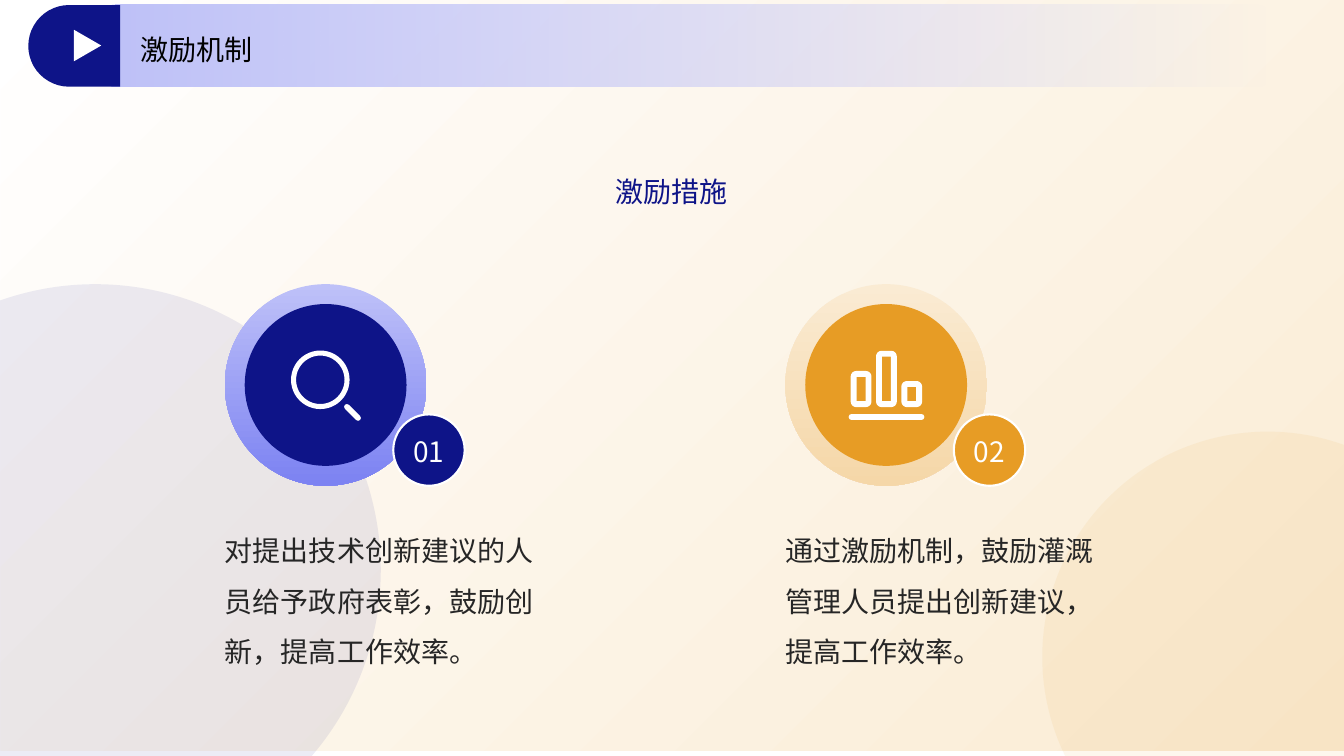
import pptx
import pptx.util
import pptx.dml.color
import pptx.enum.shapes
import pptx.enum.text
import pptx.oxml.ns
from lxml import etree

Pt = pptx.util.Pt
RGB = pptx.dml.color.RGBColor.from_string
SHAPE = pptx.enum.shapes.MSO_SHAPE
ALIGN = pptx.enum.text.PP_ALIGN
ANCHOR = pptx.enum.text.MSO_ANCHOR
qn = pptx.oxml.ns.qn
FONT = "Noto Sans CJK SC"
COLORS = {
    "navy": "0E1488", "lavender": "BEC1F8", "violet": "7C82F2",
    "orange": "E79C25", "cream": "FAEBD3", "sand": "F5D7A8",
    "white": "FFFFFF", "black": "000000", "text": "262626",
}

presentation = pptx.Presentation()
presentation.slide_width, presentation.slide_height = Pt(960), Pt(540)
slide = presentation.slides.add_slide(presentation.slide_layouts[6])


def add_shape(kind, box, colors=(), angle=0, alphas=(), line=None, width=1.5):
    """Add a shape with no fill, a solid fill or a two-stop gradient."""
    shape = slide.shapes.add_shape(kind, *[Pt(length) for length in box])
    shape.shadow.inherit = False
    if len(colors) == 2:
        shape.fill.gradient()
        shape.fill.gradient_angle = (360 - angle) % 360
        for stop, color, position in zip(shape.fill.gradient_stops, colors, (0, 1)):
            stop.color.rgb, stop.position = RGB(COLORS[color]), position
    elif colors:
        shape.fill.solid()
        shape.fill.fore_color.rgb = RGB(COLORS[colors[0]])
    else:
        shape.fill.background()
    fill_colors = list(shape._element.spPr.iter(qn("a:srgbClr")))
    for fill_color, alpha in zip(fill_colors, alphas):
        etree.SubElement(fill_color, qn("a:alpha"), val=str(alpha * 1000))
    if line:
        shape.line.color.rgb, shape.line.width = RGB(COLORS[line]), Pt(width)
    else:
        shape.line.fill.background()
    return shape


def write(shape, text, color, spacing, align=ALIGN.LEFT, anchor=ANCHOR.MIDDLE):
    """Write one 20 pt paragraph into a shape or text box."""
    frame = shape.text_frame
    frame_format = {"word_wrap": True, "vertical_anchor": anchor, "margin_left": 0,
                    "margin_right": 0, "margin_top": 0, "margin_bottom": 0}
    paragraph = frame.paragraphs[0]
    run = paragraph.add_run()
    run.text = text
    formats = (
        (frame, frame_format),
        (paragraph, {"alignment": align, "line_spacing": spacing}),
        (run.font, {"name": FONT, "size": Pt(20)}),
    )
    for target, values in formats:
        for name, value in values.items():
            setattr(target, name, value)
    run.font.color.rgb = RGB(COLORS[color])
    etree.SubElement(run.font._element, qn("a:ea"), typeface=FONT)


# Background wash and two pale discs
add_shape(SHAPE.RECTANGLE, (0.5, -4, 960, 540), ("white", "cream"), 45)
add_shape(SHAPE.OVAL, (-136, 203, 408, 408), ("navy",), alphas=(8,))
add_shape(SHAPE.OVAL, (744.5, 308.3, 322, 322), ("orange",), alphas=(8,))

# Header band with title and play mark
add_shape(SHAPE.ROUNDED_RECTANGLE, (72.7, 3.6, 835.2, 58.3),
          ("lavender", "lavender"), alphas=(100, 0))
tab = add_shape(SHAPE.ROUND_2_SAME_RECTANGLE, (23.8, 0, 58.3, 65.5), ("navy",))
tab.adjustments[0], tab.adjustments[1] = 0.5, 0
tab.rotation = 270
play_mark = add_shape(SHAPE.ISOSCELES_TRIANGLE, (51.3, 22.8, 22.5, 19.5), ("white",))
play_mark.rotation = 90
title = slide.shapes.add_textbox(Pt(100.6), Pt(14.4), Pt(613), Pt(39))
write(title, "激励机制", "black", 1.1)

# Section heading
heading = slide.shapes.add_textbox(Pt(52.6), Pt(105), Pt(854.6), Pt(56))
write(heading, "激励措施", "navy", 1.3, ALIGN.CENTER)

# Two measures: halo, disc, numbered badge and description
CARD_TOP, CARD_LEFTS = 203, (160.6, 561)
measures = (
    ("01", "navy", ("lavender", "violet"),
     "对提出技术创新建议的人员给予政府表彰，鼓励创新，提高工作效率。"),
    ("02", "orange", ("cream", "sand"),
     "通过激励机制，鼓励灌溉管理人员提出创新建议，提高工作效率。"),
)
for left, (number, color, halo_colors, description) in zip(CARD_LEFTS, measures):
    add_shape(SHAPE.OVAL, (left, CARD_TOP, 144, 144), halo_colors, 90)
    add_shape(SHAPE.OVAL, (left + 14.2, CARD_TOP + 14.2, 115.6, 115.6), (color,))
    badge = add_shape(SHAPE.OVAL, (left + 120.3, CARD_TOP + 93, 51, 51), (color,), line="white")
    write(badge, number, "white", 1.1, ALIGN.CENTER)
    body = slide.shapes.add_textbox(Pt(left), Pt(369.4), Pt(239), Pt(117.4))
    write(body, description, "text", 1.5, anchor=ANCHOR.TOP)

# Icon outlines: magnifier lens and three chart bars
add_shape(SHAPE.OVAL, (209.7, 252.2, 38.2, 38.2), line="white", width=3.6)
BAR_BOTTOM = 288.7
for bar, height in enumerate((21.6, 36, 14.4)):
    box = (609.8 + 18.1 * bar, BAR_BOTTOM - height, 10.6, height)
    add_shape(SHAPE.ROUNDED_RECTANGLE, box, line="white", width=4.2)

# Icon strokes: magnifier handle and chart baseline
strokes = ((247.8, 290.6, 255.8, 298.6), (608.2, 297.8, 658.3, 297.8))
for ends in strokes:
    stroke = slide.shapes.add_connector(
        pptx.enum.shapes.MSO_CONNECTOR.STRAIGHT, *[Pt(length) for length in ends])
    stroke.line.color.rgb, stroke.line.width = RGB(COLORS["white"]), Pt(4)
    stroke.line._get_or_add_ln().set("cap", "rnd")
    etree.SubElement(stroke._element.spPr, qn("a:effectLst"))

presentation.save("out.pptx")
